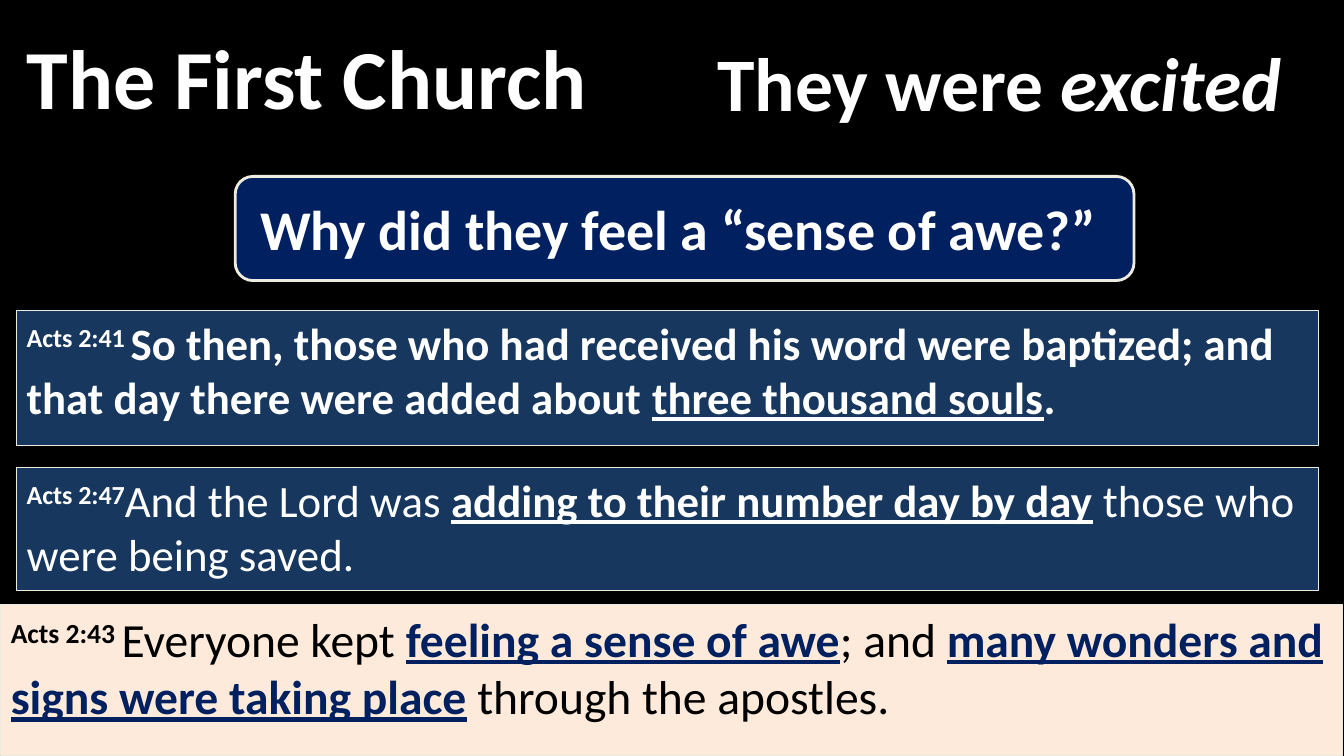
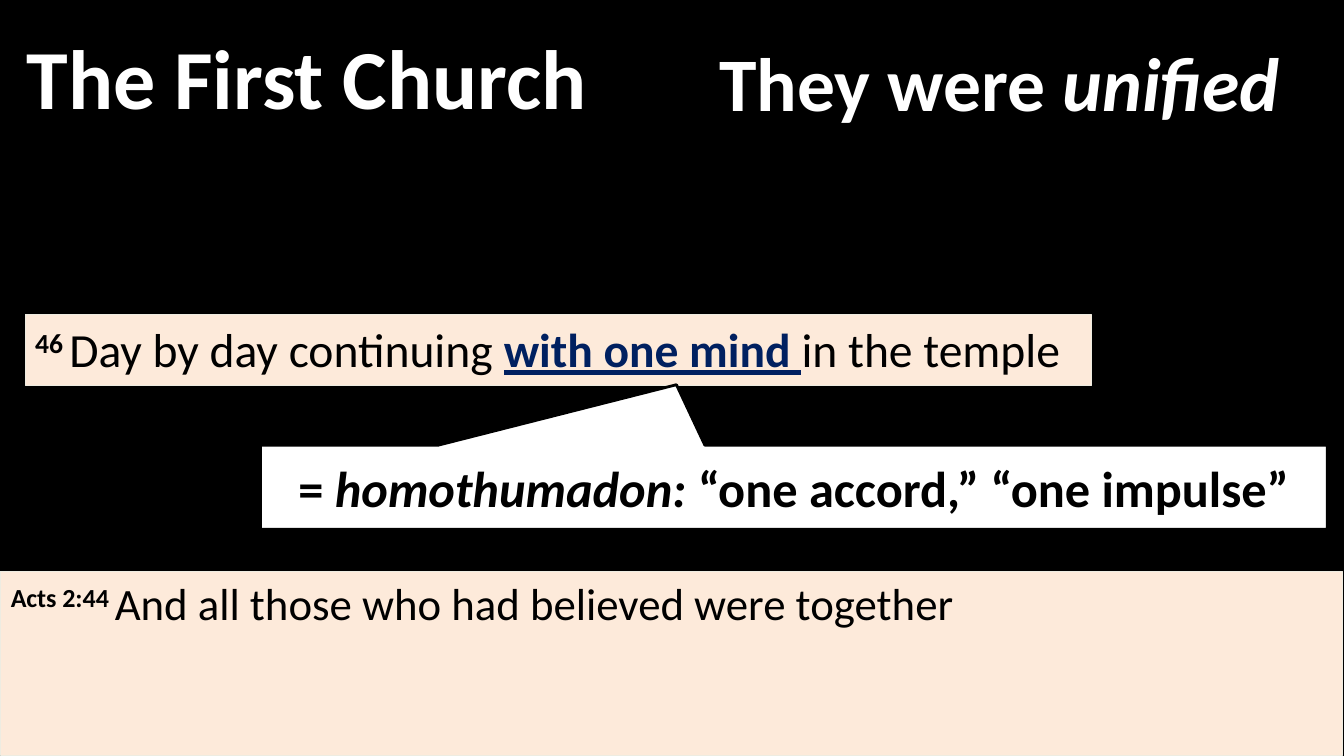
from pptx import Presentation
from pptx.dml.color import RGBColor
from pptx.enum.shapes import MSO_SHAPE
from pptx.enum.text import MSO_ANCHOR, MSO_AUTO_SIZE, PP_ALIGN
from pptx.util import Inches, Pt

RECTANGLE = MSO_SHAPE.RECTANGLE
ROUND_CALLOUT = MSO_SHAPE.ROUNDED_RECTANGULAR_CALLOUT
SQUARE_CALLOUT = MSO_SHAPE.RECTANGULAR_CALLOUT
TOP, MIDDLE = MSO_ANCHOR.TOP, MSO_ANCHOR.MIDDLE
LEFT, CENTER = PP_ALIGN.LEFT, PP_ALIGN.CENTER
NO_AUTOFIT = MSO_AUTO_SIZE.NONE

BLACK = RGBColor(0x00, 0x00, 0x00)
WHITE = RGBColor(0xFF, 0xFF, 0xFF)
PEACH = RGBColor(0xFD, 0xEA, 0xDA)
CREAM = RGBColor(0xEE, 0xEC, 0xE1)
NAVY = RGBColor(0x00, 0x20, 0x60)
SLATE = RGBColor(0x17, 0x37, 0x5E)

FONT = "Calibri"
COLUMNS, ROWS = 160, 90
WIDTH, HEIGHT = Inches(13.33), Inches(7.5)

PLAIN = {"bold": False}
BOLD = {"bold": True}
ITALIC = {"bold": True, "italic": True}
UNDERLINED = {"bold": True, "underline": True}
KEY = {"bold": True, "underline": True, "color": NAVY}
REFERENCE = {"bold": True, "raised": True}


def grid(left, top, width, height):
    return (round(left * WIDTH / COLUMNS), round(top * HEIGHT / ROWS),
            round(width * WIDTH / COLUMNS), round(height * HEIGHT / ROWS))


def write(box, pieces, size, color, align=LEFT, anchor=TOP):
    frame = box.text_frame
    frame.word_wrap = True
    frame.auto_size = NO_AUTOFIT
    frame.vertical_anchor = anchor
    para = frame.paragraphs[0]
    para.alignment = align
    for text, style in pieces:
        run = para.add_run()
        run.text = text
        font = run.font
        font.name = FONT
        font.size = Pt(size)
        font.bold = style["bold"]
        font.italic = style.get("italic", False)
        font.underline = style.get("underline", False)
        font.color.rgb = style.get("color", color)
        if style.get("raised"):
            run._r.get_or_add_rPr().set("baseline", "30000")


def add_panel(slide, kind, area, fill, line, line_width):
    panel = slide.shapes.add_shape(kind, *grid(*area))
    panel.shadow.inherit = False
    panel.fill.solid()
    panel.fill.fore_color.rgb = fill
    panel.line.color.rgb = line
    panel.line.width = Pt(line_width)
    return panel


def add_verse(slide, area, fill, color, size, pieces):
    panel = add_panel(slide, RECTANGLE, area, fill, CREAM, 0.75)
    write(panel, pieces, size, color)


def add_callout(slide, kind, area, pointer, fill, line, size, color, pieces):
    callout = add_panel(slide, kind, area, fill, line, 2)
    for index, value in enumerate(pointer):
        callout.adjustments[index] = value
    write(callout, pieces, size, color, CENTER, MIDDLE)


def add_page(deck, quality):
    slide = deck.slides.add_slide(deck.slide_layouts[5])
    title = slide.shapes.title
    title.left, title.top, title.width, title.height = grid(0, 4, 73, 10)
    write(title, [("The First Church", BOLD)], 60, WHITE, CENTER, MIDDLE)
    heading = slide.shapes.add_textbox(*grid(82, 4.7, 76, 10))
    write(heading, [("They were ", BOLD), (quality + " ", ITALIC)],
          54, WHITE, CENTER, MIDDLE)
    return slide


def build_excited(deck):
    slide = add_page(deck, "excited")
    add_callout(slide, ROUND_CALLOUT, (28, 21, 107, 12.4), (-0.22, 0.5, 0.17),
                NAVY, CREAM, 40, WHITE,
                [("Why did they feel a “sense of awe?” ", BOLD)])
    add_verse(slide, (2, 37, 155, 16), SLATE, WHITE, 32, [
        ("Acts 2:41 ", REFERENCE),
        ("So then, those who had received his word were baptized; "
         "and that day there were added about ", BOLD),
        ("three thousand souls", UNDERLINED),
        (". ", BOLD)])
    add_verse(slide, (2, 55.7, 155, 14.6), SLATE, WHITE, 32, [
        ("Acts 2:47", REFERENCE),
        ("And the Lord was ", PLAIN),
        ("adding to their number day by day", UNDERLINED),
        (" those who were being saved.", PLAIN)])
    add_verse(slide, (0.1, 72, 159.7, 17.9), PEACH, BLACK, 34, [
        ("Acts 2:43 ", REFERENCE),
        ("Everyone kept ", PLAIN),
        ("feeling a sense of awe", KEY),
        ("; and ", PLAIN),
        ("many wonders and signs were taking place", KEY),
        (" through the apostles.", PLAIN)])


def build_unified(deck):
    slide = add_page(deck, "unified")
    add_verse(slide, (3, 37.5, 127, 8.4), PEACH, BLACK, 34, [
        ("46 ", REFERENCE),
        ("Day by day continuing ", PLAIN),
        ("with one mind ", KEY),
        ("in the temple", PLAIN)])
    add_callout(slide, SQUARE_CALLOUT, (31, 53, 127, 10), (-0.11, -1.22),
                WHITE, BLACK, 36, BLACK, [
                    ("= ", BOLD),
                    ("homothumadon: ", ITALIC),
                    ("“one accord,” “one impulse”", BOLD)])
    add_verse(slide, (0.1, 68, 159.7, 21.9), PEACH, BLACK, 32, [
        ("Acts 2:44 ", REFERENCE),
        ("And all those who had believed were together", PLAIN)])


def main():
    deck = Presentation()
    deck.slide_width, deck.slide_height = WIDTH, HEIGHT
    background = deck.slide_master.background.fill
    background.solid()
    background.fore_color.rgb = BLACK
    build_excited(deck)
    build_unified(deck)
    deck.save("out.pptx")


if __name__ == "__main__":
    main()
